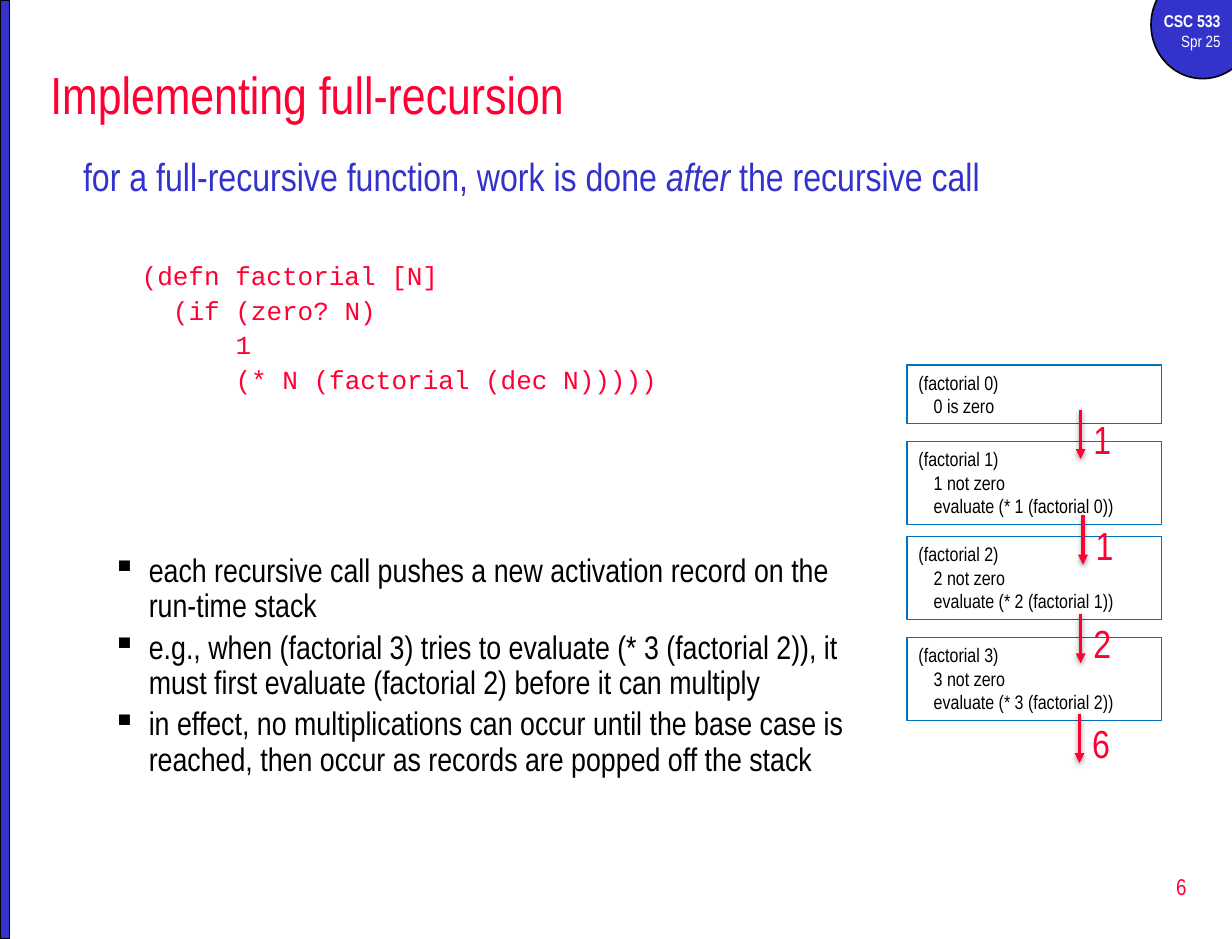
from lxml.etree import SubElement
from pptx import Presentation
from pptx.dml.color import RGBColor
from pptx.enum.shapes import MSO_CONNECTOR as CONN, MSO_SHAPE as SHAPE
from pptx.enum.text import MSO_ANCHOR as ANCHOR, PP_ALIGN as ALIGN
from pptx.oxml.ns import qn
from pptx.util import Inches, Pt

RED, BLUE, BLACK, WHITE, FRAME_BLUE = "FF0033", "3333CC", "000000", "FFFFFF", "0070C0"
SANS, MONO = "Arial Narrow", "Courier New"
CODE_CHAR = 0.6 * 16 / 72

CODE = [(0, "(defn factorial [N]"), (2, "(if (zero? N)"), (6, "1"),
        (6, "(* N (factorial (dec N)))))")]
NOTES = [
    "each recursive call pushes a new activation record on the run-time stack",
    "e.g., when (factorial 3) tries to evaluate (* 3 (factorial 2)), it must first "
    "evaluate (factorial 2) before it can multiply",
    "in effect, no multiplications can occur until the base case is reached, then "
    "occur as records are popped off the stack",
]
FRAMES = [(0, 3.11, 0.5), (1, 3.76, 0.71), (2, 4.57, 0.71), (3, 5.43, 0.71)]
RETURNS = [("1", 9.21, 3.49), ("1", 9.23, 4.39), ("2", 9.21, 5.23), ("6", 9.2, 6.08)]


def rgb(color):
    """Turn a hex string into a colour."""
    return RGBColor.from_string(color)


def add_box(shapes, x, y, w, h, anchor=ANCHOR.TOP):
    """Add a wrapping text box and return its text frame."""
    tf = shapes.add_textbox(Inches(x), Inches(y), Inches(w), Inches(h)).text_frame
    tf.word_wrap = True
    tf.vertical_anchor = anchor
    return tf


def add_shape(slide, kind, x, y, w, h, fill, line, weight):
    """Add a preset shape without shadow; fill may be None."""
    sp = slide.shapes.add_shape(kind, Inches(x), Inches(y), Inches(w), Inches(h))
    sp.shadow.inherit = False
    if fill:
        sp.fill.solid()
        sp.fill.fore_color.rgb = rgb(fill)
    else:
        sp.fill.background()
    sp.line.color.rgb = rgb(line)
    sp.line.width = Pt(weight)
    return sp


def add_text(tf, text, size, color, font=SANS, align=ALIGN.LEFT, left=0, hang=0):
    """Append a styled paragraph, using the empty first one if it is free."""
    p = tf.paragraphs[0]
    if p.runs:
        p = tf.add_paragraph()
    p.add_run().text = text
    p.alignment = align
    p.font.size, p.font.name, p.font.color.rgb = Pt(size), font, rgb(color)
    pPr = p._p.get_or_add_pPr()
    pPr.set("marL", str(Inches(left)))
    pPr.set("indent", str(Inches(-hang)))
    return p


def set_spacing(p, before):
    """Tighten the lines and set the space before a paragraph."""
    p.line_spacing = 0.9
    p.space_before = Pt(before)


def add_bullet(tf, text):
    """Append a paragraph with a square bullet."""
    p = add_text(tf, text, 20, BLACK, left=0.57, hang=0.31)
    set_spacing(p, 4)
    bullet = p._p.pPr.makeelement(qn("a:buChar"), {"char": "▪"})
    p._p.pPr.find(qn("a:defRPr")).addprevious(bullet)


def add_frame(slide, n, y, h):
    """Add the activation record of one factorial call."""
    sp = add_shape(slide, SHAPE.RECTANGLE, 7.73, y, 2.17, h, None, FRAME_BLUE, 0.75)
    tf = sp.text_frame
    tf.vertical_anchor = ANCHOR.TOP
    add_text(tf, f"(factorial {n})", 12, BLACK)
    steps = [f"{n} not zero", f"evaluate (* {n} (factorial {n - 1}))"] if n else ["0 is zero"]
    for step in steps:
        add_text(tf, step, 12, BLACK, left=0.31, hang=0.18)


def add_return(slide, value, x, y):
    """Add a grouped arrow and the value that it passes down."""
    shapes = slide.shapes.add_group_shape().shapes
    add_text(add_box(shapes, x + 0.01, y, 0.36, 0.44), value, 24, RED)
    arrow = shapes.add_connector(CONN.STRAIGHT, Inches(x), Inches(y), Inches(x), Inches(y + 0.42))
    arrow.line.color.rgb = rgb(RED)
    arrow.line.width = Pt(2)
    SubElement(arrow.line._get_or_add_ln(), qn("a:tailEnd"), type="triangle")
    effects = SubElement(arrow._element.spPr, qn("a:effectLst"))
    shadow = SubElement(effects, qn("a:outerShdw"), blurRad=str(Pt(3.1)), dist=str(Pt(1.6)),
                        dir="5400000", rotWithShape="0")
    tint = SubElement(shadow, qn("a:srgbClr"), val=BLACK)
    SubElement(tint, qn("a:alpha"), val="38000")


def add_decor(slide):
    """Add the side bar, the course badge and the page number."""
    add_shape(slide, SHAPE.OVAL, 9.81, -0.25, 0.88, 0.92, BLUE, BLACK, 1)
    tf = add_box(slide.shapes, 9.67, 0.04, 0.83, 0.46)
    add_text(tf, "CSC 533", 10.5, WHITE, align=ALIGN.RIGHT).font.bold = True
    add_text(tf, "Spr 25", 10, WHITE, align=ALIGN.RIGHT)
    add_shape(slide, SHAPE.RECTANGLE, 0, 0, 0.08, 8, BLUE, BLACK, 1)
    tf = add_box(slide.shapes, 8.02, 7.29, 2.19, 0.53, ANCHOR.MIDDLE)
    add_text(tf, "6", 14, RED, align=ALIGN.RIGHT)


def add_body(slide):
    """Add the lead sentence and the code below it."""
    tf = add_box(slide.shapes, 0.61, 1.29, 8.03, 2.71)
    p = add_text(tf, "for a full-recursive function, work is done ", 24, BLUE,
                 left=0.38, hang=0.38)
    set_spacing(p, 5)
    r = p.add_run()
    r.text = "after"
    r.font.italic = True
    p.add_run().text = " the recursive call"
    for i, (depth, line) in enumerate(CODE):
        p = add_text(tf, line, 16, RED, MONO, left=0.5 + depth * CODE_CHAR)
        set_spacing(p, 4 if i else 39)


def main():
    """Build the slide and save it."""
    prs = Presentation()
    prs.slide_width, prs.slide_height = Inches(10.5), Inches(8)
    slide = prs.slides.add_slide(prs.slide_layouts[6])
    add_decor(slide)
    tf = add_box(slide.shapes, 0.33, 0.42, 9.92, 0.75, ANCHOR.MIDDLE)
    add_text(tf, "Implementing full-recursion", 32, RED)
    add_body(slide)
    for frame in FRAMES:
        add_frame(slide, *frame)
    for item in RETURNS:
        add_return(slide, *item)
    tf = add_box(slide.shapes, 0.6, 4.67, 6.94, 2.35)
    for note in NOTES:
        add_bullet(tf, note)
    prs.save("out.pptx")


if __name__ == "__main__":
    main()
